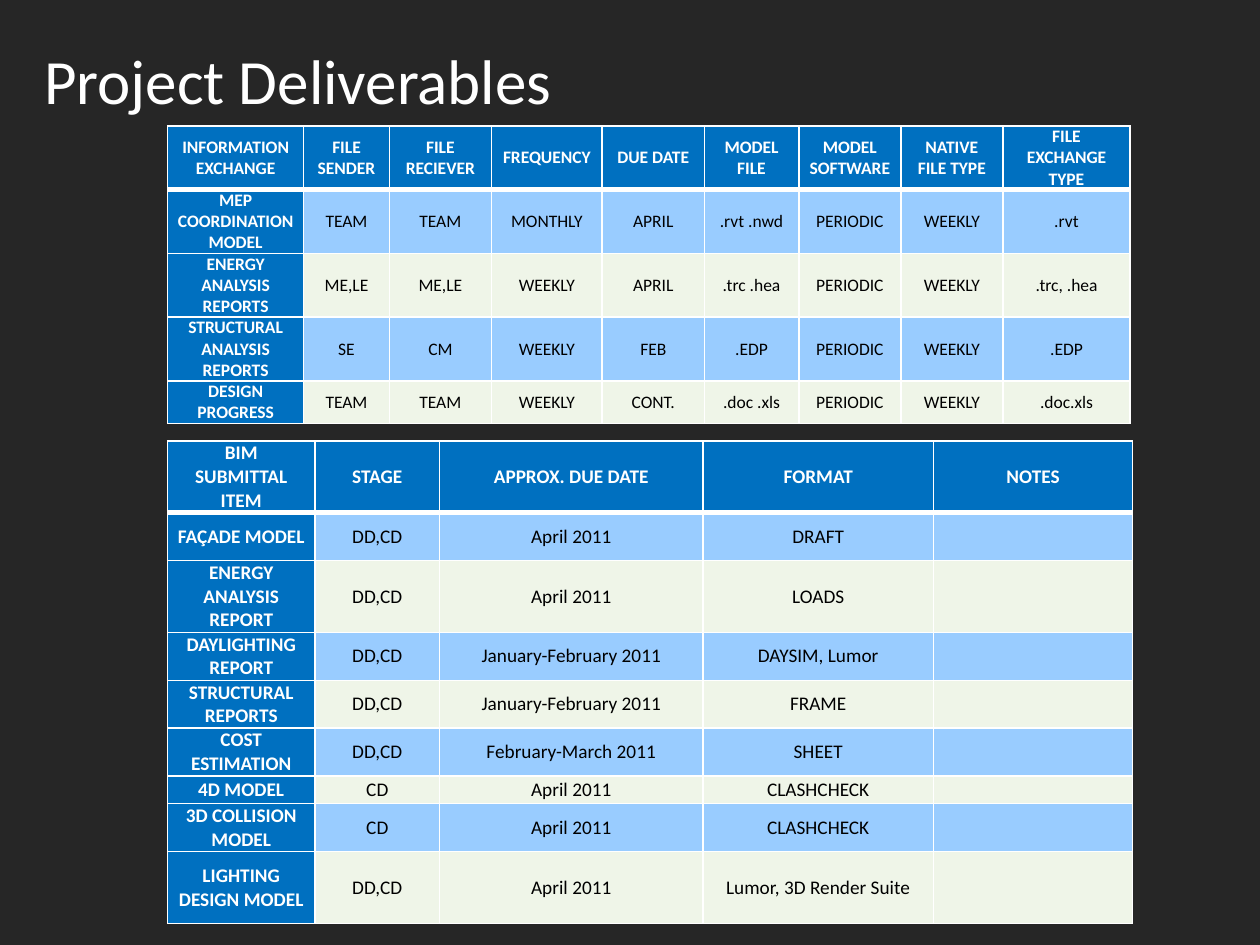
from lxml import etree
from pptx import Presentation
from pptx.dml.color import RGBColor
from pptx.enum.text import MSO_ANCHOR, PP_ALIGN
from pptx.oxml.ns import qn
from pptx.util import Inches, Pt

MIDDLE = MSO_ANCHOR.MIDDLE
CENTER = PP_ALIGN.CENTER
LEFT = PP_ALIGN.LEFT

FONT = "Calibri"
DARK = RGBColor(0x26, 0x26, 0x26)
WHITE = RGBColor(0xFF, 0xFF, 0xFF)
BLACK = RGBColor(0, 0, 0)
HEADING_BLUE = RGBColor(0x00, 0x70, 0xC0)
BAND_BLUE = RGBColor(0x99, 0xCC, 0xFF)
BAND_GREEN = RGBColor(0xEF, 0xF5, 0xE8)

SLIDE_WIDTH, SLIDE_HEIGHT = Inches(10), Inches(7.5)
TABLE_LEFT = 1.33
THIN, THICK = 1, 3

EXCHANGE_COLUMNS = [1.08, 0.68, 0.81, 0.88, 0.81, 0.75, 0.81, 0.81, 1.01]
EXCHANGE_ROWS = [0.5, 0.5, 0.5, 0.5, 0.33]
EXCHANGES = [
    ["INFORMATION EXCHANGE", "FILE SENDER", "FILE RECIEVER", "FREQUENCY", "DUE DATE",
     "MODEL FILE", "MODEL SOFTWARE", "NATIVE FILE TYPE", "FILE EXCHANGE TYPE"],
    ["MEP COORDINATION MODEL", "TEAM", "TEAM", "MONTHLY", "APRIL",
     ".rvt .nwd", "PERIODIC", "WEEKLY", ".rvt"],
    ["ENERGY ANALYSIS REPORTS", "ME,LE", "ME,LE", "WEEKLY", "APRIL",
     ".trc .hea", "PERIODIC", "WEEKLY", ".trc, .hea"],
    ["STRUCTURAL ANALYSIS REPORTS", "SE", "CM", "WEEKLY", "FEB",
     ".EDP", "PERIODIC", "WEEKLY", ".EDP"],
    ["DESIGN PROGRESS", "TEAM", "TEAM", "WEEKLY", "CONT.",
     ".doc .xls", "PERIODIC", "WEEKLY", ".doc.xls"],
]

SUBMITTAL_COLUMNS = [1.17, 0.99, 2.09, 1.83, 1.58]
SUBMITTAL_ROWS = [0.57, 0.38, 0.57, 0.38, 0.38, 0.38, 0.22, 0.38, 0.57]
SUBMITTALS = [
    ["BIM SUBMITTAL ITEM", "STAGE", "APPROX. DUE DATE", "FORMAT", "NOTES"],
    ["FAÇADE MODEL", "DD,CD", "April 2011", "DRAFT", ""],
    ["ENERGY ANALYSIS REPORT", "DD,CD", "April 2011", "LOADS", ""],
    ["DAYLIGHTING REPORT", "DD,CD", "January-February 2011", "DAYSIM, Lumor", ""],
    ["STRUCTURAL REPORTS", "DD,CD", "January-February 2011", "FRAME", ""],
    ["COST ESTIMATION", "DD,CD", "February-March 2011", "SHEET", ""],
    ["4D MODEL", "CD", "April 2011", "CLASHCHECK", ""],
    ["3D COLLISION MODEL", "CD", "April 2011", "CLASHCHECK", ""],
    ["LIGHTING DESIGN MODEL", "DD,CD", "April 2011", "Lumor, 3D Render Suite", ""],
]


def write_run(paragraph, text, size, color, bold=False):
    """Add one formatted run to a paragraph."""
    run = paragraph.add_run()
    run.text = text
    run.font.name = FONT
    run.font.size = Pt(size)
    run.font.bold = bold
    run.font.color.rgb = color


def add_title(slide, text, left, top, width, height):
    """Place and format the slide title in the given box of inches."""
    title = slide.shapes.title
    title.left, title.top = Inches(left), Inches(top)
    title.width, title.height = Inches(width), Inches(height)
    title.text_frame.vertical_anchor = MIDDLE
    paragraph = title.text_frame.paragraphs[0]
    paragraph.alignment = LEFT
    write_run(paragraph, text, 36, WHITE)


def set_borders(cell, top, bottom):
    """Draw white borders, with the top and bottom widths in points."""
    properties = cell._tc.get_or_add_tcPr()
    sides = {"a:lnL": THIN, "a:lnR": THIN, "a:lnT": top, "a:lnB": bottom}
    for side, width in sides.items():
        line = etree.SubElement(properties, qn(side), w=str(Pt(width)))
        solid = etree.SubElement(line, qn("a:solidFill"))
        etree.SubElement(solid, qn("a:srgbClr"), val=str(WHITE))


def fill_cell(cell, text, row, column, size, inset):
    """Format one cell by its place in the table and write its text."""
    heading = row == 0 or column == 0
    set_borders(cell, THICK if row == 1 else THIN, THICK if row == 0 else THIN)
    cell.fill.solid()
    band = BAND_BLUE if row % 2 else BAND_GREEN
    cell.fill.fore_color.rgb = HEADING_BLUE if heading else band
    cell.vertical_anchor = MIDDLE
    cell.margin_left = cell.margin_right = Inches(inset)
    cell.margin_top = cell.margin_bottom = 0
    paragraph = cell.text_frame.paragraphs[0]
    paragraph.alignment = CENTER
    if text:
        write_run(paragraph, text, size, WHITE if heading else BLACK, heading)
    else:
        etree.SubElement(paragraph._p, qn("a:endParaRPr"), sz=str(size * 100))


def add_schedule(slide, entries, left, top, columns, rows, size, inset):
    """Build a banded table with a heading row and a heading column."""
    table = slide.shapes.add_table(
        len(rows), len(columns), Inches(left), Inches(top),
        Inches(sum(columns)), Inches(sum(rows))).table
    for column, width in zip(table.columns, columns):
        column.width = Inches(width)
    for row, height in zip(table.rows, rows):
        row.height = Inches(height)
    for row, entry in enumerate(entries):
        for column, text in enumerate(entry):
            fill_cell(table.cell(row, column), text, row, column, size, inset)


def main():
    """Build the deliverables slide and save it."""
    deck = Presentation()
    deck.slide_width, deck.slide_height = SLIDE_WIDTH, SLIDE_HEIGHT
    slide = deck.slides.add_slide(deck.slide_layouts.get_by_name("Title Only"))
    slide.background.fill.solid()
    slide.background.fill.fore_color.rgb = DARK
    add_title(slide, "Project Deliverables", 0.25, 0.17, 7.42, 0.92)
    add_schedule(slide, EXCHANGES, TABLE_LEFT, 1,
                 EXCHANGE_COLUMNS, EXCHANGE_ROWS, 10, 0.07)
    add_schedule(slide, SUBMITTALS, TABLE_LEFT, 3.5,
                 SUBMITTAL_COLUMNS, SUBMITTAL_ROWS, 11, 0.08)
    deck.save("out.pptx")


if __name__ == "__main__":
    main()
